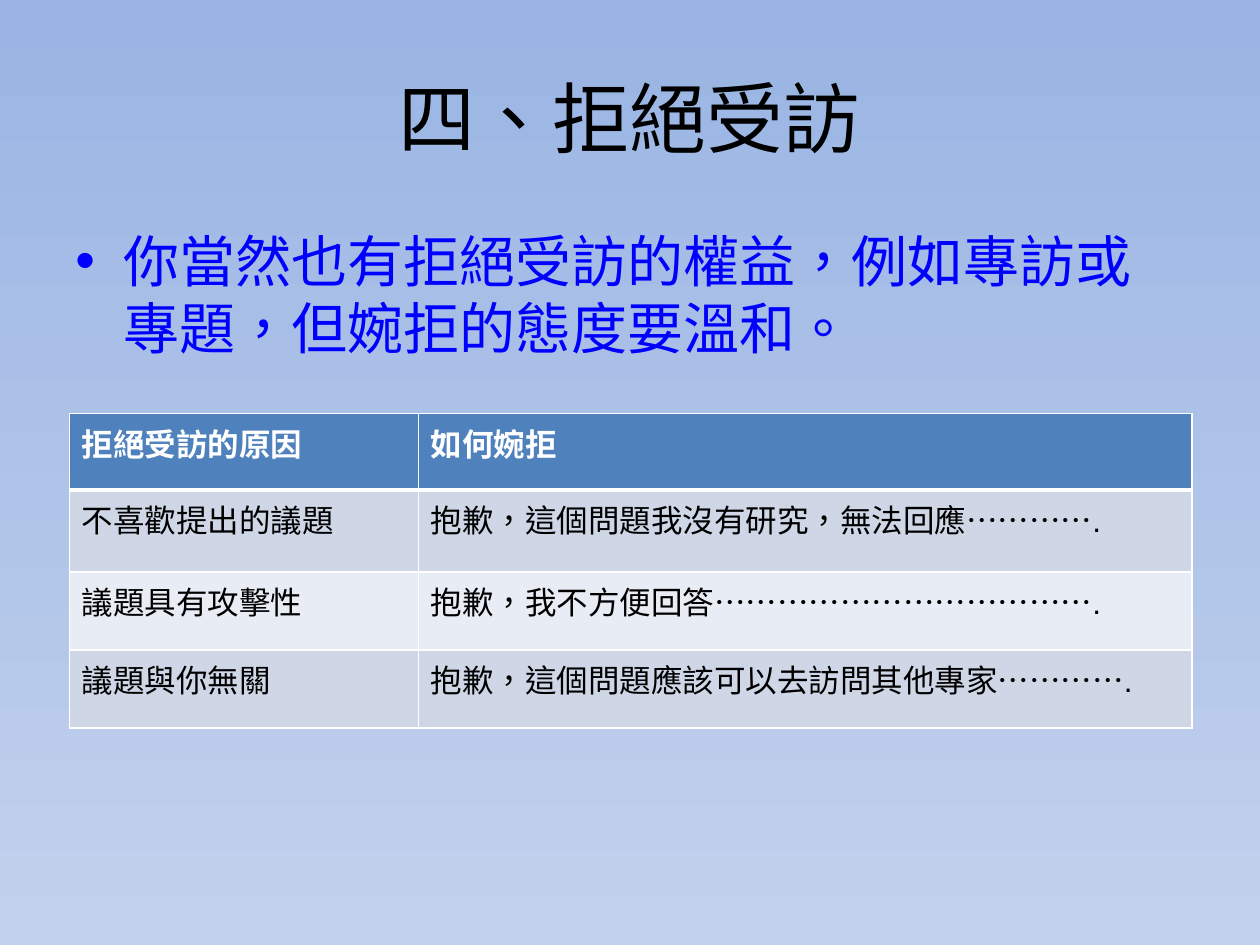
from dataclasses import dataclass

from lxml.etree import SubElement
from pptx import Presentation
from pptx.dml.color import RGBColor as RGB
from pptx.enum.text import MSO_ANCHOR as Anchor, PP_ALIGN as Align
from pptx.oxml.ns import qn
from pptx.util import Inches, Pt

TITLE = "四、拒絕受訪"
ADVICE = "你當然也有拒絕受訪的權益，例如專訪或專題，但婉拒的態度要溫和。"
ROWS = [
    ("拒絕受訪的原因", "如何婉拒"),
    ("不喜歡提出的議題", "抱歉，這個問題我沒有研究，無法回應…………."),
    ("議題具有攻擊性", "抱歉，我不方便回答………………………………."),
    ("議題與你無關", "抱歉，這個問題應該可以去訪問其他專家…………."),
]
COL_WIDTHS = (2.77, 6.14)
ROW_HEIGHTS = (0.61, 0.65, 0.62, 0.62)


@dataclass(frozen=True)
class Theme:
    font: str = "Arial"
    title_size: int = 44
    body_size: int = 32
    table_size: int = 18
    bg_top: str = "9AB5E4"
    bg_bottom: str = "C2D1ED"
    ink: str = "000000"
    accent: str = "0000FF"
    white: str = "FFFFFF"
    header: str = "4F81BD"
    bands: tuple = ("E8ECF4", "CFD7E7")


THEME = Theme()


def style(p, size, color, bold=False):
    for r in p.runs:
        r._r.get_or_add_rPr().set("lang", "zh-TW")
        f = r.font
        f.name, f.size, f.bold = THEME.font, Pt(size), bold
        f.color.rgb = RGB.from_string(color)


def add_text(slide, box, text, size, color):
    tf = slide.shapes.add_textbox(*map(Inches, box)).text_frame
    tf.word_wrap = True
    tf.text = text
    style(tf.paragraphs[0], size, color)
    return tf


def add_bullet(p, indent, color):
    pPr = p._p.get_or_add_pPr()
    pPr.set("marL", str(Inches(indent)))
    pPr.set("indent", str(-Inches(indent)))
    clr = SubElement(pPr, qn("a:buClr"))
    SubElement(clr, qn("a:srgbClr"), val=color)
    SubElement(pPr, qn("a:buFont"), typeface=THEME.font)
    SubElement(pPr, qn("a:buChar"), char="•")


def add_borders(cell, widths):
    """Draw white borders; widths are points for left, right, top, bottom."""
    tcPr = cell._tc.get_or_add_tcPr()
    for side, width in zip("LRTB", widths):
        ln = SubElement(tcPr, qn(f"a:ln{side}"), w=str(Pt(width)))
        fill = SubElement(ln, qn("a:solidFill"))
        SubElement(fill, qn("a:srgbClr"), val=THEME.white)


def add_reason_table(slide, left, top):
    size = Inches(sum(COL_WIDTHS)), Inches(sum(ROW_HEIGHTS))
    table = slide.shapes.add_table(
        len(ROWS), len(COL_WIDTHS), Inches(left), Inches(top), *size).table
    for col, width in zip(table.columns, COL_WIDTHS):
        col.width = Inches(width)
    for i, (texts, height) in enumerate(zip(ROWS, ROW_HEIGHTS)):
        table.rows[i].height = Inches(height)
        head = i == 0
        fill = THEME.header if head else THEME.bands[i % 2]
        for j, text in enumerate(texts):
            cell = table.cell(i, j)
            cell.text = text
            style(cell.text_frame.paragraphs[0], THEME.table_size,
                  THEME.white if head else THEME.ink, head)
            add_borders(cell, (1, 1, 3 if i == 1 else 1, 3 if head else 1))
            cell.fill.solid()
            cell.fill.fore_color.rgb = RGB.from_string(fill)


def set_background(slide):
    fill = slide.background.fill
    fill.gradient()
    fill.gradient_angle = 270
    colors = THEME.bg_top, THEME.bg_bottom
    for stop, position, color in zip(fill.gradient_stops, (0, 1), colors):
        stop.position = position
        stop.color.rgb = RGB.from_string(color)


def main():
    prs = Presentation()
    prs.slide_width, prs.slide_height = Inches(10), Inches(7.5)
    slide = prs.slides.add_slide(prs.slide_layouts[6])
    set_background(slide)

    title = add_text(slide, (0.5, 0.3, 9, 1.25), TITLE,
                     THEME.title_size, THEME.ink)
    title.vertical_anchor = Anchor.MIDDLE
    title.paragraphs[0].alignment = Align.CENTER

    advice = add_text(slide, (0.5, 1.75, 9, 4.95), ADVICE,
                      THEME.body_size, THEME.accent)
    add_bullet(advice.paragraphs[0], 0.38, THEME.accent)

    add_reason_table(slide, 0.55, 3.28)
    prs.save("out.pptx")


if __name__ == "__main__":
    main()
